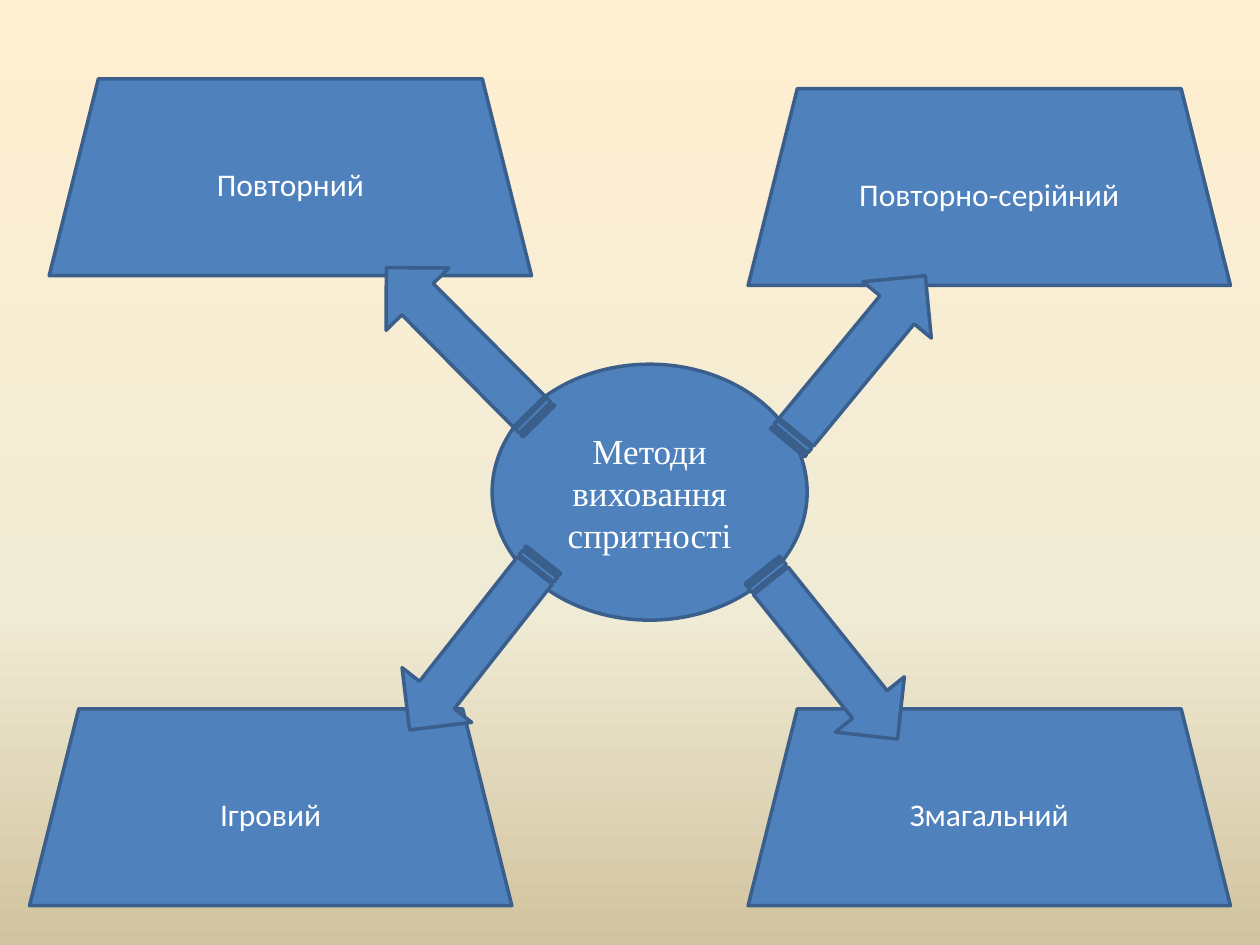
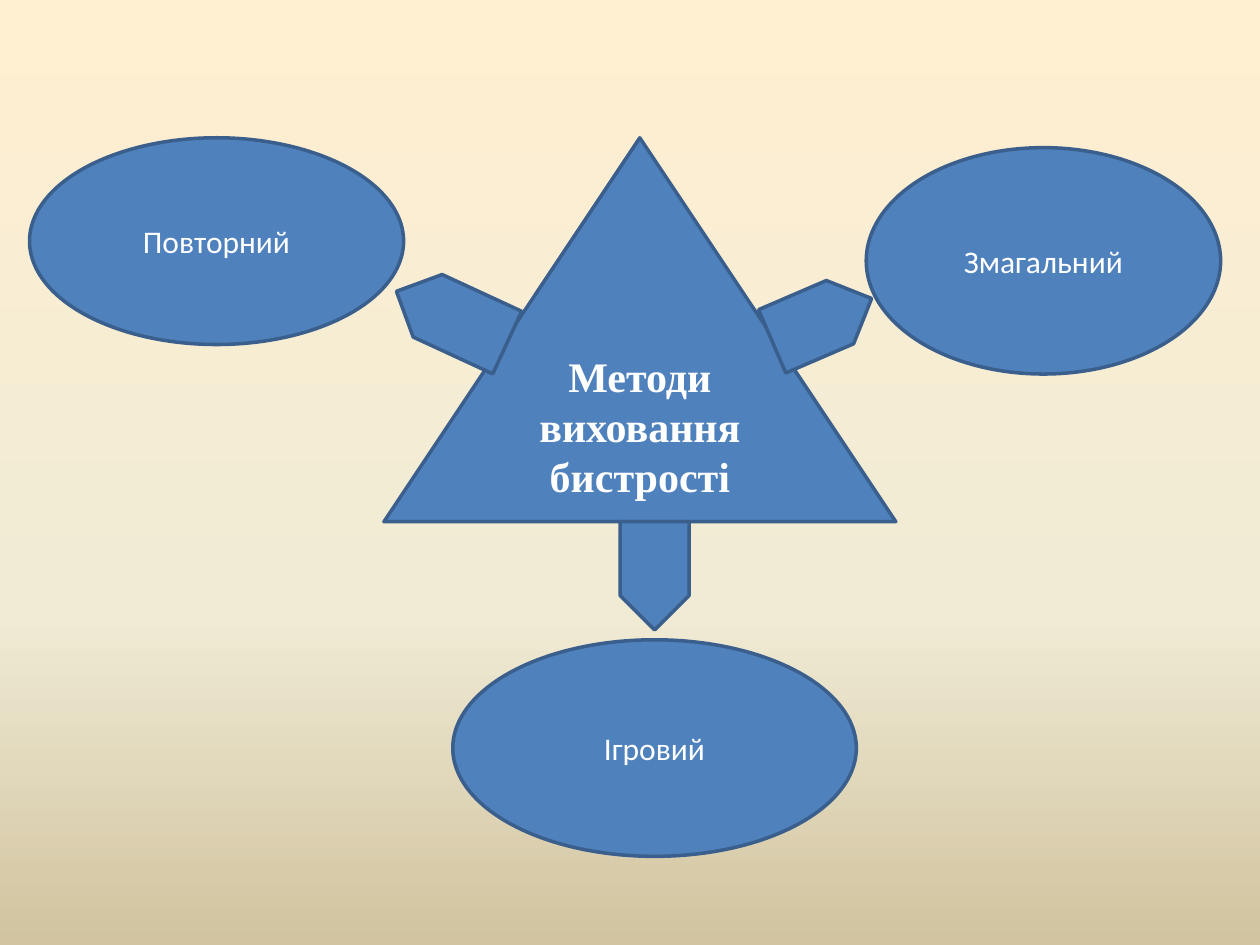
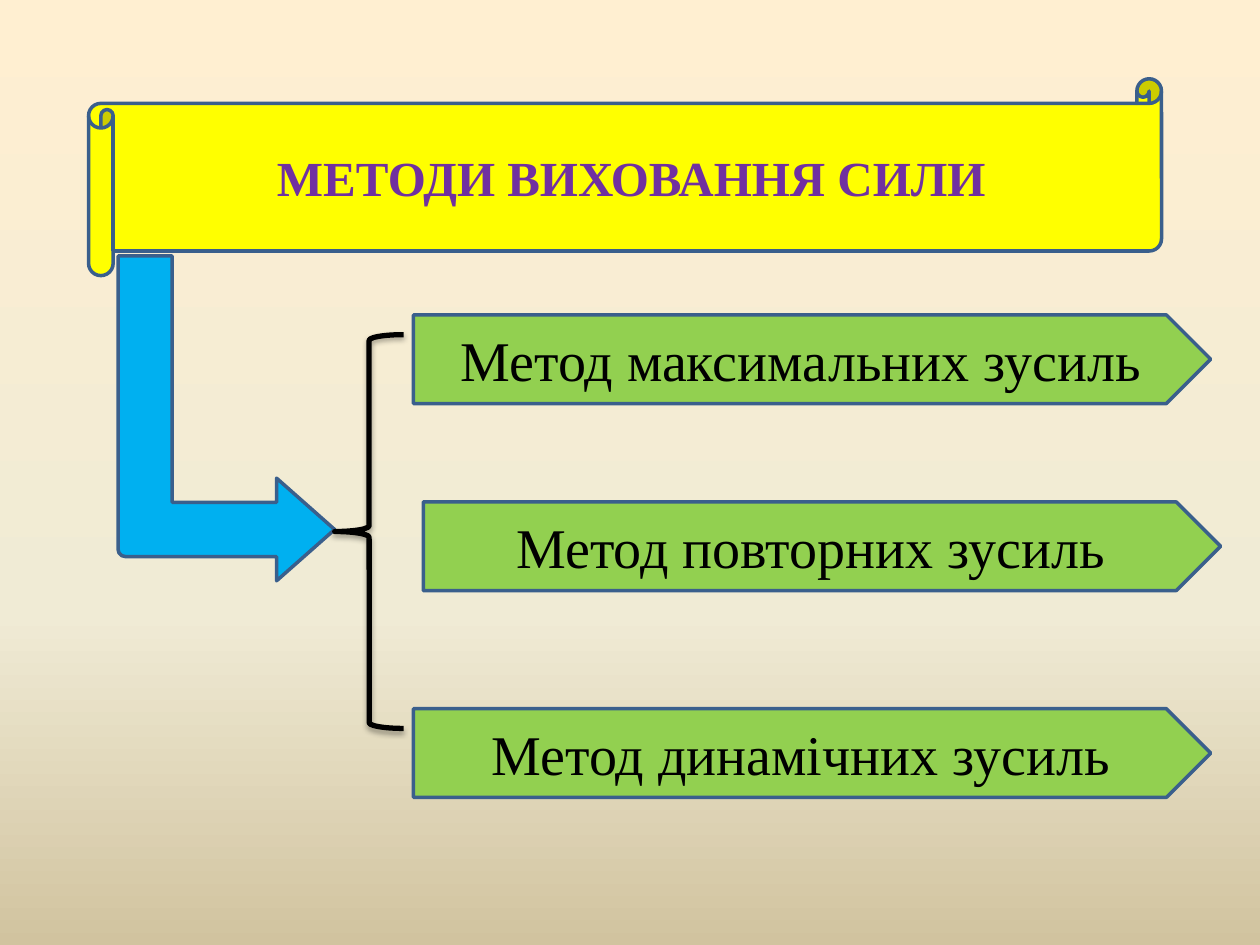
from copy import deepcopy
from dataclasses import dataclass

from lxml import etree
from pptx import Presentation
from pptx.dml.color import RGBColor
from pptx.enum.shapes import MSO_SHAPE as SHAPE
from pptx.enum.text import MSO_ANCHOR, PP_ALIGN
from pptx.oxml.ns import qn
from pptx.util import Inches, Pt

WIDTH, HEIGHT = Inches(10), Inches(7.5)
CELL = WIDTH / 128  # the slide is a grid of 128 columns and 96 rows

COLORS = {
    "blue": "4F81BD", "outline": "3A5F8C", "white": "FFFFFF", "black": "000000",
    "yellow": "FFFF00", "purple": "7030A0", "sky": "00B0F0", "green": "92D050",
}
BACKGROUND_STOPS = [(0, "FFEFD1"), (0.65, "F0EBD5"), (1, "D1C39F")]
SANS, SERIF = "Calibri", "Times New Roman"


@dataclass
class TextStyle:
    font: str = SANS
    size: int = 18
    color: str = "white"
    bold: bool = False


def rgb(name):
    return RGBColor.from_string(COLORS[name])


def paint_background(master):
    fill = master.background.fill
    fill.gradient()
    fill.gradient_angle = 270
    stop_list = master.element.find(".//" + qn("a:gsLst"))
    stop_list.append(deepcopy(stop_list[-1]))
    for stop, (position, color) in zip(fill.gradient_stops, BACKGROUND_STOPS):
        stop.position = position
        stop.color.rgb = RGBColor.from_string(color)


class Region:
    """A part of a slide; its shapes are placed in cells from its corner."""

    def __init__(self, slide, column, row):
        self.shapes, self.column, self.row = slide.shapes, column, row

    def add(self, kind, box, fill="blue", line="outline", line_width=2, rotation=0):
        column, row, columns, rows = box
        lengths = (self.column + column, self.row + row, columns, rows)
        shape = self.shapes.add_shape(kind, *(round(n * CELL) for n in lengths))
        shape.shadow.inherit = False
        shape.rotation = rotation
        if fill:
            shape.fill.solid()
            shape.fill.fore_color.rgb = rgb(fill)
        else:
            shape.fill.background()
        shape.line.color.rgb = rgb(line)
        shape.line.width = Pt(line_width)
        return shape

    def add_label(self, kind, box, text, style, fill="blue"):
        frame = self.add(kind, box, fill).text_frame
        frame.word_wrap = True
        frame.vertical_anchor = MSO_ANCHOR.MIDDLE
        paragraph = frame.paragraphs[0]
        paragraph.text = text
        paragraph.alignment = PP_ALIGN.CENTER
        font = paragraph.font
        font.name, font.size, font.bold = style.font, Pt(style.size), style.bold
        font.color.rgb = rgb(style.color)


def draw_hub(region, hub, node_kind, nodes, arrow_kind, arrows):
    """A central idea with arrows out to its methods."""
    region.add_label(*hub)
    for text, box in nodes:
        region.add_label(node_kind, box, text, TextStyle())
    for box, rotation in arrows:
        region.add(arrow_kind, box, rotation=rotation)


def draw_agility_methods(region):
    node_size, arrow_size = (49, 20), (22, 9)
    corners = [("Повторно-серійний", (73, 1)), ("Повторний", (2, 0)),
               ("Ігровий", (0, 64)), ("Змагальний", (73, 64))]
    arrows = [((73, 24), 309.5), ((33, 22.5), 225.2),
              ((70.3, 54), 51.3), ((34.4, 53), 128.2)]
    draw_hub(
        region,
        (SHAPE.OVAL, (47, 29, 32, 26), "Методи виховання спритності", TextStyle(SERIF, 20)),
        SHAPE.TRAPEZOID, [(text, corner + node_size) for text, corner in corners],
        SHAPE.STRIPED_RIGHT_ARROW, [(corner + arrow_size, turn) for corner, turn in arrows],
    )


def draw_speed_methods(region):
    draw_hub(
        region,
        (SHAPE.ISOSCELES_TRIANGLE, (36, 0, 52, 39), "Методи виховання бистрості",
         TextStyle(SERIF, 24, bold=True)),
        SHAPE.OVAL,
        [("Повторний", (0, 0, 38, 21)), ("Змагальний", (85, 1, 36, 23)),
         ("Ігровий", (43, 51, 41, 22))],
        SHAPE.PENTAGON,
        [((75, 15, 11, 7), 336.7), ((36.7, 14.7, 12.4, 7), 204.8), ((58, 41, 11, 7), 90)],
    )


def add_soft_shadow(shape):
    effects = shape.element.spPr.find(qn("a:effectLst"))
    shadow = etree.SubElement(effects, qn("a:outerShdw"), blurRad=str(Pt(3.1)),
                              dist=str(Pt(1.8)), dir="5400000", rotWithShape="0")
    color = etree.SubElement(shadow, qn("a:srgbClr"), val=COLORS["black"])
    etree.SubElement(color, qn("a:alpha"), val="35000")


def draw_strength_methods(region):
    region.add_label(SHAPE.HORIZONTAL_SCROLL, (0, 0, 109, 20), "МЕТОДИ ВИХОВАННЯ СИЛИ",
                     TextStyle(SERIF, 28, "purple", True), "yellow")

    arrow = region.add(SHAPE.BENT_ARROW, (3, 18, 22, 33), "sky", rotation=180)
    arrow.element.spPr.find(qn("a:xfrm")).set("flipH", "1")
    for index, value in enumerate((0.25, 0.237, 0.268, 0.033)):
        arrow.adjustments[index] = value

    methods = [("Метод максимальних зусиль", 33, 24), ("Метод повторних зусиль", 34, 43),
               ("Метод динамічних зусиль", 33, 64)]
    for text, column, row in methods:
        region.add_label(SHAPE.PENTAGON, (column, row, 81, 9), text,
                         TextStyle(SERIF, 32, "black"), "green")

    brace = region.add(SHAPE.LEFT_BRACE, (25, 26, 7, 40), None, "black", 3)
    brace.adjustments[0] = 0.083
    add_soft_shadow(brace)


def main():
    presentation = Presentation()
    presentation.slide_width, presentation.slide_height = WIDTH, HEIGHT
    paint_background(presentation.slide_master)
    blank = presentation.slide_layouts[6]
    for draw, column, row in [(draw_agility_methods, 3, 8), (draw_speed_methods, 3, 14),
                              (draw_strength_methods, 9, 8)]:
        draw(Region(presentation.slides.add_slide(blank), column, row))
    presentation.save("out.pptx")


if __name__ == "__main__":
    main()
